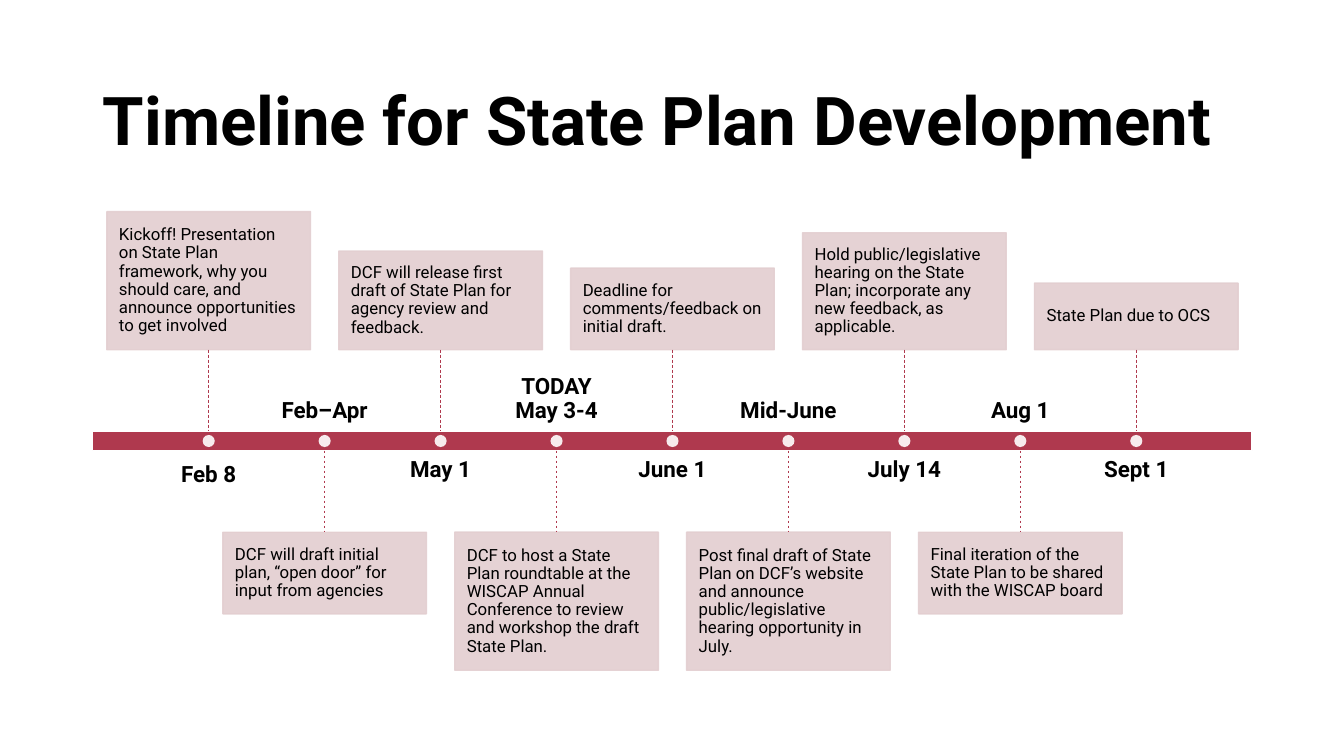
from copy import deepcopy
from dataclasses import dataclass

from pptx import Presentation
from pptx.dml.color import RGBColor
from pptx.enum.dml import MSO_LINE
from pptx.enum.shapes import MSO_CONNECTOR, MSO_SHAPE
from pptx.enum.text import MSO_ANCHOR, PP_ALIGN
from pptx.oxml.ns import qn
from pptx.oxml.xmlchemy import OxmlElement
from pptx.shapes.autoshape import Shape
from pptx.slide import Slide
from pptx.util import Inches, Pt


@dataclass(frozen=True)
class Theme:
    font: str = "Roboto"
    black: RGBColor = RGBColor(0, 0, 0)
    white: RGBColor = RGBColor(255, 255, 255)
    crimson: RGBColor = RGBColor(0xAF, 0x39, 0x4E)
    blush: RGBColor = RGBColor(0xE3, 0xCE, 0xD0)
    title_size: int = 48
    date_size: int = 16
    card_size: int = 12
    opacity: int = 90


@dataclass(frozen=True)
class Milestone:
    date: str
    description: str
    card_height: float
    date_top: float


THEME = Theme()

# Timeline geometry in inches
BAR_LEFT, BAR_TOP, BAR_WIDTH, BAR_HEIGHT = 0.92, 4.28, 11.5, 0.19
STEP = 1.15
CARD_WIDTH = 2.02
UPPER_CARD_BOTTOM, LOWER_CARD_TOP = 3.47, 5.28
DATE_WIDTH, DATE_HEIGHT = 1.84, 0.54
DATE_ABOVE, DATE_BELOW = 3.66, 4.55
DOT = 0.12

# Cards alternate above and below the bar, starting above
MILESTONES = [
    Milestone("Feb 8", "Kickoff! Presentation on State Plan framework, why you should care, "
              "and announce opportunities to get involved", 1.37, 4.6),
    Milestone("Feb–Apr", "DCF will draft initial plan, “open door” for input from agencies",
              0.81, DATE_ABOVE),
    Milestone("May 1", "DCF will release first draft of State Plan for agency review and "
              "feedback.", 0.98, DATE_BELOW),
    Milestone("TODAY\nMay 3-4", "DCF to host a State Plan roundtable at the WISCAP Annual "
              "Conference to review and workshop the draft State Plan.", 1.37, DATE_ABOVE),
    Milestone("June 1", "Deadline for comments/feedback on initial draft.", 0.81, DATE_BELOW),
    Milestone("Mid-June", "Post final draft of State Plan on DCF’s website and announce "
              "public/legislative hearing opportunity in July.", 1.37, DATE_ABOVE),
    Milestone("July 14", "Hold public/legislative hearing on the State Plan; incorporate any "
              "new feedback, as applicable.", 1.16, DATE_BELOW),
    Milestone("Aug 1", "Final iteration of the State Plan to be shared with the WISCAP board",
              0.81, DATE_ABOVE),
    Milestone("Sept 1", "State Plan due to OCS", 0.66, DATE_BELOW),
]


def write_text(shape: Shape, text: str, *, size: int, bold: bool = False,
               align: PP_ALIGN = PP_ALIGN.LEFT, anchor: MSO_ANCHOR = MSO_ANCHOR.MIDDLE,
               inset: float = 0) -> None:
    frame = shape.text_frame
    frame.word_wrap = True
    frame.vertical_anchor = anchor
    frame.margin_left = frame.margin_right = Inches(inset)
    frame.margin_top = frame.margin_bottom = Inches(inset)
    paragraph = frame.paragraphs[0]
    paragraph.text = text
    paragraph.alignment = align
    paragraph.line_spacing = 0.9
    for run in paragraph.runs:
        run.font.name = THEME.font
        run.font.size = Pt(size)
        run.font.bold = bold
        run.font.color.rgb = THEME.black
    # Line breaks take the format of the first run
    for line_break in paragraph._p.findall(qn("a:br")):
        line_break.append(deepcopy(paragraph.runs[0].font._element))


def add_block(slide: Slide, kind: MSO_SHAPE, left: float, top: float, width: float,
              height: float, *, fill: RGBColor, line: RGBColor | None = None,
              opacity: int = 100) -> Shape:
    shape = slide.shapes.add_shape(kind, Inches(left), Inches(top), Inches(width), Inches(height))
    shape.shadow.inherit = False
    shape.fill.solid()
    shape.fill.fore_color.rgb = fill
    if line is None:
        shape.line.fill.background()
    else:
        shape.line.color.rgb = line
        shape.line.width = Pt(1)
    if opacity < 100:
        for color in shape._element.spPr.iter(qn("a:srgbClr")):
            alpha = OxmlElement("a:alpha")
            alpha.set("val", str(opacity * 1000))
            color.append(alpha)
    return shape


def add_stem(slide: Slide, center: float, top: float, bottom: float) -> None:
    stem = slide.shapes.add_connector(MSO_CONNECTOR.STRAIGHT, Inches(center), Inches(top),
                                      Inches(center), Inches(bottom))
    stem.line.color.rgb = THEME.crimson
    stem.line.width = Pt(0.5)
    stem.line.dash_style = MSO_LINE.DASH
    stem._element.spPr.append(OxmlElement("a:effectLst"))


def add_milestone(slide: Slide, milestone: Milestone, index: int) -> None:
    center = BAR_LEFT + STEP * (index + 1)
    card_above = index % 2 == 0

    # Card and its stem
    card_top = UPPER_CARD_BOTTOM - milestone.card_height if card_above else LOWER_CARD_TOP
    card = add_block(slide, MSO_SHAPE.RECTANGLE, center - CARD_WIDTH / 2, card_top, CARD_WIDTH,
                     milestone.card_height, fill=THEME.blush, line=THEME.blush,
                     opacity=THEME.opacity)
    write_text(card, milestone.description, size=THEME.card_size, inset=0.12)
    if card_above:
        add_stem(slide, center, UPPER_CARD_BOTTOM, BAR_TOP)
    else:
        add_stem(slide, center, BAR_TOP + BAR_HEIGHT, LOWER_CARD_TOP)

    # Date on the other side of the bar
    date = slide.shapes.add_textbox(Inches(center - DATE_WIDTH / 2), Inches(milestone.date_top),
                                    Inches(DATE_WIDTH), Inches(DATE_HEIGHT))
    write_text(date, milestone.date, size=THEME.date_size, bold=True, align=PP_ALIGN.CENTER,
               anchor=MSO_ANCHOR.TOP if card_above else MSO_ANCHOR.BOTTOM)

    # Dot on the bar
    add_block(slide, MSO_SHAPE.OVAL, center - DOT / 2, BAR_TOP + (BAR_HEIGHT - DOT) / 2, DOT, DOT,
              fill=THEME.white, opacity=THEME.opacity)


def main() -> None:
    presentation = Presentation()
    presentation.slide_width, presentation.slide_height = Inches(13.33), Inches(7.5)
    slide = presentation.slides.add_slide(presentation.slide_layouts[5])

    # Title
    title = slide.shapes.title
    title.left, title.top = Inches(0.92), Inches(0.61)
    title.width, title.height = Inches(11.5), Inches(1.24)
    write_text(title, "Timeline for State Plan Development", size=THEME.title_size, bold=True,
               inset=0.1)

    # Timeline
    add_block(slide, MSO_SHAPE.RECTANGLE, BAR_LEFT, BAR_TOP, BAR_WIDTH, BAR_HEIGHT,
              fill=THEME.crimson, line=THEME.white)
    for index, milestone in enumerate(MILESTONES):
        add_milestone(slide, milestone, index)

    presentation.save("out.pptx")


if __name__ == "__main__":
    main()
